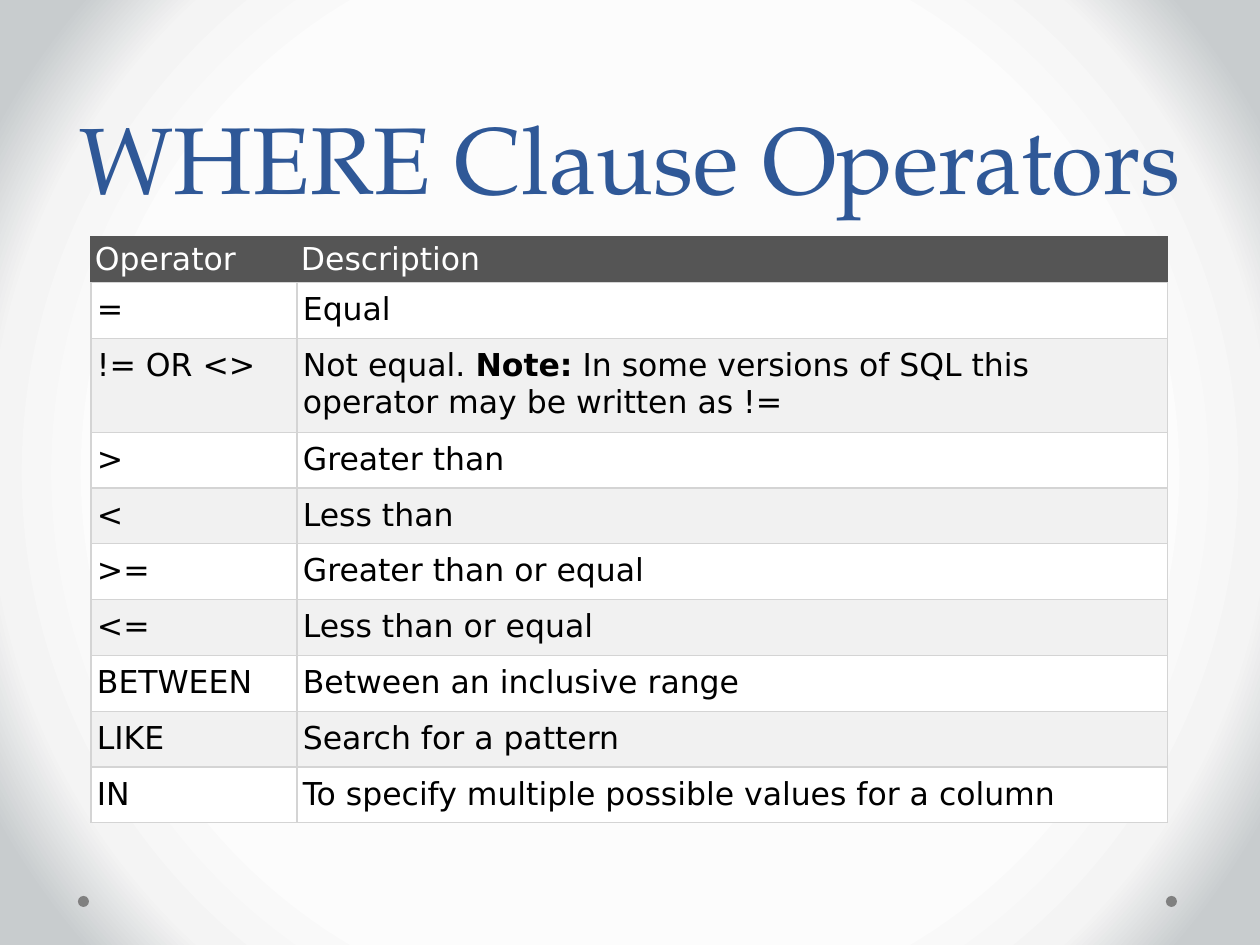
"""Build a slide that lists the operators of the SQL WHERE clause."""
from typing import NamedTuple

from pptx import Presentation
from pptx.dml.color import RGBColor
from pptx.enum.shapes import MSO_SHAPE
from pptx.enum.text import MSO_ANCHOR, PP_ALIGN
from pptx.oxml import parse_xml
from pptx.oxml.ns import nsdecls
from pptx.util import Emu, Pt

OVAL = MSO_SHAPE.OVAL
BOTTOM = MSO_ANCHOR.BOTTOM
TOP = MSO_ANCHOR.TOP
CENTER = PP_ALIGN.CENTER

EMU_PER_PX = 914400 / 126
TITLE_FONT = "TeX Gyre Pagella"
BODY_FONT = "DejaVu Sans"
BORDER_PT = 0.75
COLORS = {
    "title": "2F5897",
    "dot": "808080",
    "header": "555555",
    "header_text": "FFFFFF",
    "text": "000000",
    "odd": "FFFFFF",
    "even": "F1F1F1",
    "border": "D4D4D4",
    "center": "FCFCFC",
    "halo": "F4F4F4",
    "corner": "C8CCCE",
}
BACKDROP_STOPS = {66: "center", 81: "halo", 92: "corner"}


class Span(NamedTuple):
    text: str
    bold: bool = False


class OperatorRow(NamedTuple):
    operator: str
    description: list[Span]
    height: int = 55


class CellStyle(NamedTuple):
    fill: str
    text: str
    side_border: str
    margin_x: int
    margin_y: int


HEADER_STYLE = CellStyle("header", "header_text", "header", 4, 4)
ODD_STYLE = CellStyle("odd", "text", "border", 6, 9)
EVEN_STYLE = CellStyle("even", "text", "border", 6, 9)

HEADER = OperatorRow("Operator", [Span("Description")], 45)
OPERATORS = [
    OperatorRow("=", [Span("Equal")]),
    OperatorRow(
        "!= OR <>",
        [
            Span("Not equal. "),
            Span("Note:", True),
            Span(" In some versions of SQL this operator may be written as !="),
        ],
        91,
    ),
    OperatorRow(">", [Span("Greater than")]),
    OperatorRow("<", [Span("Less than")]),
    OperatorRow(">=", [Span("Greater than or equal")]),
    OperatorRow("<=", [Span("Less than or equal")]),
    OperatorRow("BETWEEN", [Span("Between an inclusive range")]),
    OperatorRow("LIKE", [Span("Search for a pattern")]),
    OperatorRow("IN", [Span("To specify multiple possible values for a column")]),
]
COLUMN_WIDTHS = [206, 871]


def px(length: int) -> Emu:
    return Emu(round(length * EMU_PER_PX))


def rgb(name: str) -> RGBColor:
    return RGBColor.from_string(COLORS[name])


def add_spans(paragraph, spans: list[Span], font: str, size: int, color: str) -> None:
    for span in spans:
        run = paragraph.add_run()
        run.text = span.text
        run.font.name = font
        run.font.size = Pt(size)
        run.font.bold = span.bold
        run.font.color.rgb = rgb(color)


def paint_backdrop(slide) -> None:
    stops = "".join(
        f'<a:gs pos="{percent * 1000}"><a:srgbClr val="{COLORS[name]}"/></a:gs>'
        for percent, name in BACKDROP_STOPS.items()
    )
    backdrop = parse_xml(
        f'<p:bg {nsdecls("p", "a")}><p:bgPr><a:gradFill rotWithShape="1">'
        f'<a:gsLst>{stops}</a:gsLst><a:path path="circle">'
        '<a:fillToRect l="50000" t="50000" r="50000" b="50000"/></a:path>'
        "</a:gradFill><a:effectLst/></p:bgPr></p:bg>"
    )
    slide.element.cSld.insert(0, backdrop)


def add_dot(slide, left: int) -> None:
    dot = slide.shapes.add_shape(OVAL, px(left), px(896), px(11), px(11))
    dot.shadow.inherit = False
    dot.fill.solid()
    dot.fill.fore_color.rgb = rgb("dot")
    dot.line.fill.background()


def add_title(slide, title: str) -> None:
    heading = slide.shapes.add_textbox(px(63), px(0), px(1134), px(220)).text_frame
    heading.word_wrap = True
    heading.vertical_anchor = BOTTOM
    line = heading.paragraphs[0]
    line.alignment = CENTER
    line.line_spacing = Pt(58)
    add_spans(line, [Span(title)], TITLE_FONT, 54, "title")


def add_borders(cell, side: str) -> None:
    edges = {"lnL": side, "lnR": side, "lnT": side, "lnB": "border"}
    properties = cell._tc.get_or_add_tcPr()
    for position, (edge, color) in enumerate(edges.items()):
        border = parse_xml(
            f'<a:{edge} {nsdecls("a")} w="{Pt(BORDER_PT)}"><a:solidFill>'
            f'<a:srgbClr val="{COLORS[color]}"/></a:solidFill></a:{edge}>'
        )
        properties.insert(position, border)


def fill_cell(cell, spans: list[Span], style: CellStyle) -> None:
    cell.margin_left = cell.margin_right = px(style.margin_x)
    cell.margin_top = cell.margin_bottom = px(style.margin_y)
    cell.vertical_anchor = TOP
    cell.fill.solid()
    cell.fill.fore_color.rgb = rgb(style.fill)
    add_borders(cell, style.side_border)
    add_spans(cell.text_frame.paragraphs[0], spans, BODY_FONT, 18, style.text)


def add_operator_table(slide) -> None:
    entries = [HEADER, *OPERATORS]
    width = sum(COLUMN_WIDTHS)
    height = sum(entry.height for entry in entries)
    operators = slide.shapes.add_table(
        len(entries), len(COLUMN_WIDTHS), px(91), px(237), px(width), px(height)
    ).table
    operators.first_row = False
    operators.horz_banding = False
    for column, column_width in zip(operators.columns, COLUMN_WIDTHS):
        column.width = px(column_width)
    for index, entry in enumerate(entries):
        operators.rows[index].height = px(entry.height)
        body_style = ODD_STYLE if index % 2 else EVEN_STYLE
        style = body_style if index else HEADER_STYLE
        fill_cell(operators.cell(index, 0), [Span(entry.operator)], style)
        fill_cell(operators.cell(index, 1), entry.description, style)


def main() -> None:
    presentation = Presentation()
    presentation.slide_width = px(1260)
    presentation.slide_height = px(945)
    slide = presentation.slides.add_slide(presentation.slide_layouts[6])
    paint_backdrop(slide)
    for left in (1166, 78):
        add_dot(slide, left)
    add_title(slide, "WHERE Clause Operators")
    add_operator_table(slide)
    presentation.save("out.pptx")


if __name__ == "__main__":
    main()
